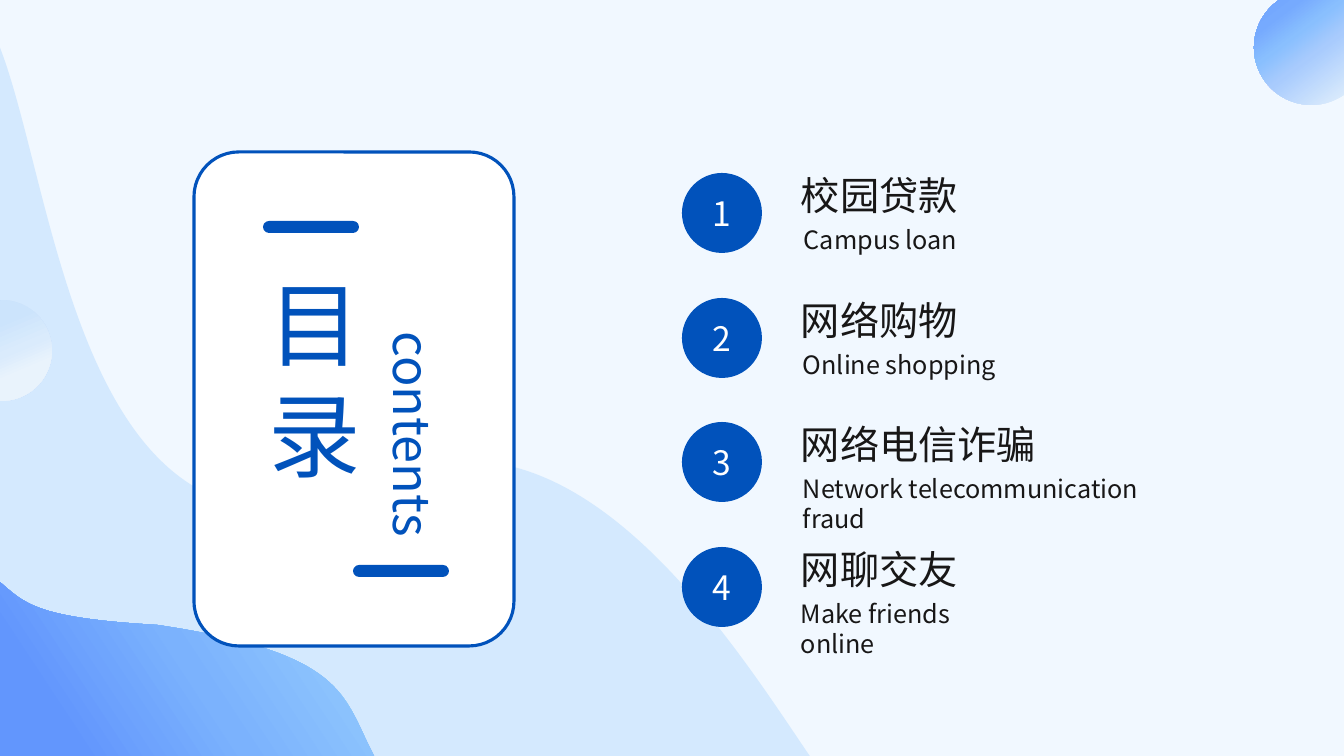
from lxml import etree
from pptx import Presentation
from pptx.dml.color import RGBColor
from pptx.enum.shapes import MSO_SHAPE as Shape
from pptx.enum.text import MSO_ANCHOR as Anchor, MSO_AUTO_SIZE as AutoSize, PP_ALIGN as Align
from pptx.oxml.ns import qn
from pptx.util import Pt

PX = 12192000 / 1344
FONT = "Noto Sans CJK SC"
BLUE = RGBColor(0x01, 0x52, 0xBB)
INK = RGBColor(0x18, 0x17, 0x17)
WHITE = RGBColor(0xFF, 0xFF, 0xFF)
PAPER = RGBColor(0xF1, 0xF8, 0xFF)
WAVE = RGBColor(0xD4, 0xE9, 0xFE)
CORNER_STOPS = [(0, RGBColor(0x9C, 0xD5, 0xFC)), (46, RGBColor(0x7B, 0xB2, 0xFD)),
                (75, RGBColor(0x62, 0x96, 0xFD)), (100, RGBColor(0x63, 0x96, 0xFD))]
PALE_STOPS = [(0, RGBColor(0xC8, 0xE2, 0xFD)), (30, RGBColor(0xCC, 0xE4, 0xFC)),
              (54, RGBColor(0xDA, 0xEB, 0xFC)), (71, RGBColor(0xE9, 0xF3, 0xFC))]
BRIGHT_STOPS = [(13, RGBColor(0xDA, 0xEB, 0xFC)), (46, RGBColor(0xA8, 0xCB, 0xFD)),
                (62, RGBColor(0x89, 0xBF, 0xFE)), (78, RGBColor(0x76, 0xAA, 0xFE)),
                (100, RGBColor(0x6A, 0x9E, 0xFE))]
TOPICS = [
    ("校园贷款", 206, "Campus loan", 3, 180),
    ("网络购物", 206, "Online shopping", 2, 219),
    ("网络电信诈骗", 268, "Network telecommunication fraud", 2, 412),
    ("网聊交友", 268, "Make friends online", 0, 245),
]


def px(*lengths):
    return [round(length * PX) for length in lengths]


def fill_solid(shape, color):
    shape.shadow.inherit = False
    shape.fill.solid()
    shape.fill.fore_color.rgb = color
    shape.line.fill.background()


def fill_gradient(shape, stops, angle):
    shape.shadow.inherit = False
    shape.line.fill.background()
    shape.fill.gradient()
    gradient = shape.element.spPr.find(qn("a:gradFill"))
    stop_list = gradient.find(qn("a:gsLst"))
    for stop in list(stop_list):
        stop_list.remove(stop)
    for position, color in stops:
        stop = etree.SubElement(stop_list, qn("a:gs"), pos=str(position * 1000))
        etree.SubElement(stop, qn("a:srgbClr"), val=str(color))
    direction = gradient.find(qn("a:lin"))
    direction.set("ang", str(round(angle * 60000)))
    direction.set("scaled", "0")


def add_plain(page, kind, left, top, width, height, color):
    shape = page.shapes.add_shape(kind, *px(left, top, width, height))
    fill_solid(shape, color)
    return shape


def write(box, lines, size, color, align=Align.LEFT, anchor=Anchor.TOP):
    frame = box.text_frame
    frame.word_wrap = True
    frame.auto_size = AutoSize.NONE
    frame.vertical_anchor = anchor
    frame.text = "\n".join(lines)
    for para in frame.paragraphs:
        para.alignment = align
        font = para.font
        font.size = Pt(size)
        font.color.rgb = color
        font.name = FONT
        etree.SubElement(font._element, qn("a:ea"), typeface=FONT)


def add_text(page, left, top, width, height, text, size, color):
    box = page.shapes.add_textbox(*px(left, top, width, height))
    write(box, [text], size, color)
    return box


def add_outline(page, start, curves, corners):
    anchors = [curve[-1] for curve in curves] + corners
    builder = page.shapes.build_freeform(*px(*start), scale=1.0)
    builder.add_line_segments([px(*point) for point in anchors], close=True)
    outline = builder.convert_to_shape()
    segments = list(outline.element.spPr.iter(qn("a:lnTo")))
    for segment, curve in zip(segments, curves):
        bend = etree.Element(qn("a:cubicBezTo"))
        for point in curve:
            x, y = px(*point)
            etree.SubElement(bend, qn("a:pt"), x=str(x - outline.left), y=str(y - outline.top))
        segment.getparent().replace(segment, bend)
    return outline


def add_backdrop(page):
    page.background.fill.solid()
    page.background.fill.fore_color.rgb = PAPER
    wave = add_outline(page, (823, 775),
                       [((754, 679), (581, 370), (373, 487)),
                        ((57, 617), (56, 124), (-16, 15))],
                       [(-10, 788), (780, 787)])
    fill_solid(wave, WAVE)
    corner = add_outline(page, (384, 773),
                         [((340, 705), (366, 656), (157, 625)),
                          ((1, 616), (28, 595), (-29, 561))],
                         [(-49, 762)])
    fill_gradient(corner, CORNER_STOPS, 146.6)
    for left, top, size, stops, angle in ((-49, 300, 101, PALE_STOPS, 67),
                                          (1254, -10, 115, BRIGHT_STOPS, 233)):
        ball = page.shapes.add_shape(Shape.OVAL, *px(left, top, size, size))
        fill_gradient(ball, stops, angle)


def add_title_card(page, left, top, width, height):
    card = add_plain(page, Shape.ROUNDED_RECTANGLE, left, top, width, height, WHITE)
    card.adjustments[0] = 0.14
    card.line.color.rgb = BLUE
    card.line.width = Pt(2.25)
    for dash_left, dash_top in ((69, 69), (159, 413)):
        dash = add_plain(page, Shape.ROUNDED_RECTANGLE,
                         left + dash_left, top + dash_top, 96, 12, BLUE)
        dash.adjustments[0] = 0.5
    title = page.shapes.title
    title.left, title.top, title.width, title.height = px(left + 64, top + 110, 96, 234)
    write(title, ["目", "录"], 66, BLUE)
    title.element.getparent().append(title.element)
    caption = add_text(page, left + 173, top + 170, 82, 234, "contents", 36, BLUE)
    caption.text_frame._txBody.bodyPr.set("vert", "eaVert")


def add_topic(page, left, top, number, topic):
    heading, heading_width, subtitle, indent, subtitle_width = topic
    disc = add_plain(page, Shape.OVAL, left, top + 7, 80, 80, BLUE)
    write(disc, [str(number)], 24, WHITE, Align.CENTER, Anchor.MIDDLE)
    text_left = left + 109
    add_text(page, text_left, top, heading_width, 57, heading, 28, INK)
    add_text(page, text_left + indent, top + 53, subtitle_width, 40, subtitle, 18, INK)


def add_topics(page, left, top, span):
    for index, topic in enumerate(TOPICS):
        offset = round(index * span / (len(TOPICS) - 1))
        add_topic(page, left, top + offset, index + 1, topic)


def main():
    deck = Presentation()
    deck.slide_width, deck.slide_height = px(1344, 756)
    page = deck.slides.add_slide(deck.slide_layouts[5])
    add_backdrop(page)
    add_title_card(page, 194, 152, 320, 494)
    add_topics(page, 682, 166, 374)
    deck.save("out.pptx")


if __name__ == "__main__":
    main()
